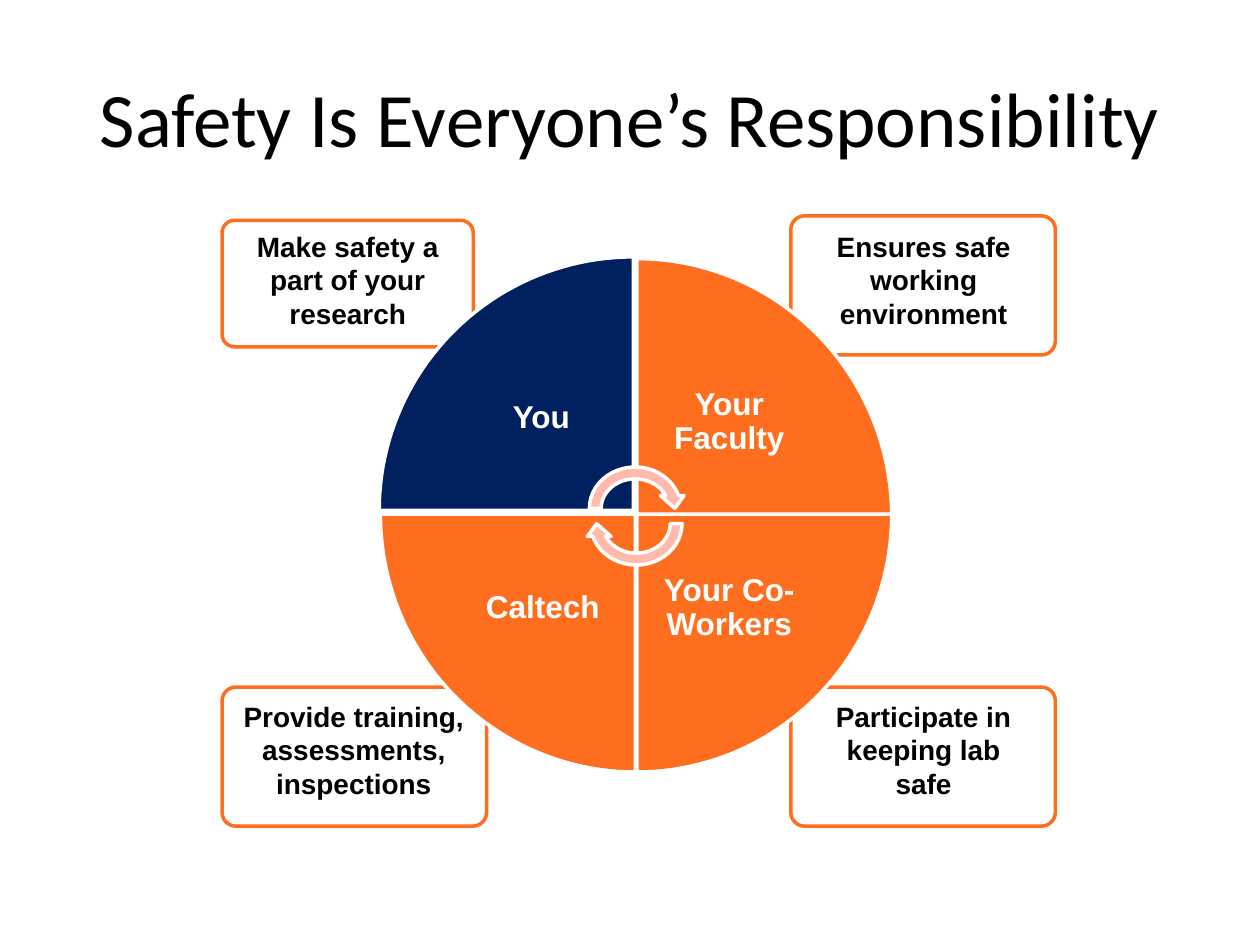
import math
from dataclasses import dataclass

import lxml.etree
import pptx
import pptx.dml.color
import pptx.enum.shapes
import pptx.enum.text
import pptx.oxml.ns
import pptx.util

Pt = pptx.util.Pt
RGB = pptx.dml.color.RGBColor.from_string
SHAPE = pptx.enum.shapes.MSO_SHAPE
ALIGN = pptx.enum.text.PP_ALIGN
ANCHOR = pptx.enum.text.MSO_ANCHOR
qn = pptx.oxml.ns.qn


@dataclass(frozen=True)
class Theme:
    black: str = "000000"
    white: str = "FFFFFF"
    navy: str = "002060"
    orange: str = "FF6E1E"
    pink: str = "FFBAAC"
    title_font: str = "Calibri"
    body_font: str = "Arial"
    title_size: int = 44
    wedge_size: int = 18
    card_size: int = 16
    line: int = 2


theme = Theme()


def paint(sp, fill, line):
    sp.shadow.inherit = False
    sp.fill.solid()
    sp.fill.fore_color.rgb = RGB(fill)
    sp.line.color.rgb = RGB(line)
    sp.line.width = Pt(theme.line)


def write(tf, text, font, size, color, bold=True):
    tf.word_wrap = True
    p = tf.paragraphs[0]
    p.text = text
    p.alignment = ALIGN.CENTER
    p.font.name = font
    p.font.size = Pt(size)
    p.font.bold = bold
    p.font.color.rgb = RGB(color)
    return p


prs = pptx.Presentation()
prs.slide_width, prs.slide_height = Pt(720), Pt(540)
s = prs.slides.add_slide(prs.slide_layouts[5])

# Title
title = s.shapes.title
title.left, title.top, title.width, title.height = Pt(36), Pt(21.6), Pt(648), Pt(90)
title.text_frame.vertical_anchor = ANCHOR.MIDDLE
write(title.text_frame, "Safety Is Everyone’s Responsibility",
      theme.title_font, theme.title_size, theme.black, bold=False)

# Cards behind the wheel: left, top, width, height
cards = [
    (126.9, 125.9, 143.6, 72.3),
    (126.9, 392.6, 151.2, 79.5),
    (451.9, 123.3, 151.2, 79.5),
    (451.9, 392.6, 151.2, 79.5),
]
for box in cards:
    sp = s.shapes.add_shape(SHAPE.ROUNDED_RECTANGLE, *map(Pt, box))
    sp.adjustments[0] = 0.1
    paint(sp, theme.white, theme.orange)
    color = sp.fill._xPr.find(qn("a:solidFill"))[0]
    lxml.etree.SubElement(color, qn("a:alpha")).set("val", "90000")

# Wheel quadrants: text, fill, hub x and y, radii, direction from the hub
wedges = [
    ("You", theme.navy, 362, 291.7, 145.3, 144.9, -1, -1),
    ("Your Faculty", theme.orange, 363.9, 295.2, 145.7, 147.4, 1, -1),
    ("Your Co-Workers", theme.orange, 363.9, 293.8, 145.7, 147.4, 1, 1),
    ("Caltech", theme.orange, 363.1, 293.8, 145.7, 147.4, -1, 1),
]
outer, inner, steps = 50, 10, 45
for text, fill, x, y, rx, ry, dx, dy in wedges:
    angles = [math.pi / 2 * i / steps for i in range(steps + 1)]
    arc = [(Pt(x + dx * rx * math.cos(a)), Pt(y + dy * ry * math.sin(a)))
           for a in angles]
    builder = s.shapes.build_freeform(Pt(x), Pt(y))
    builder.add_line_segments(arc, close=True)
    sp = builder.convert_to_shape()
    paint(sp, fill, theme.white)
    tf = sp.text_frame
    tf.vertical_anchor = ANCHOR.MIDDLE
    tf.margin_left, tf.margin_right = (
        map(Pt, (outer, inner) if dx < 0 else (inner, outer)))
    tf.margin_top, tf.margin_bottom = (
        map(Pt, (outer, inner) if dy < 0 else (inner, outer)))
    p = write(tf, text, theme.body_font, theme.wedge_size, theme.white)
    p.line_spacing = 0.9

# Circling arrows at the hub
for left, top, turn in [(333.4, 263.5, 0), (334.1, 272.2, 180)]:
    sp = s.shapes.add_shape(SHAPE.CIRCULAR_ARROW, Pt(left), Pt(top), Pt(59), Pt(54))
    sp.rotation = turn
    paint(sp, theme.pink, theme.white)

# Card labels: text, left, top, width
labels = [
    ("Make safety a part of your research", 126.9, 127.5, 143.6),
    ("Participate in keeping lab safe", 461.5, 396, 132.5),
    ("Ensures safe working environment", 467.3, 127.5, 121),
    ("Provide training, assessments, inspections", 126.9, 396, 150.5),
]
for text, left, top, width in labels:
    tf = s.shapes.add_textbox(Pt(left), Pt(top), Pt(width), Pt(72)).text_frame
    write(tf, text, theme.body_font, theme.card_size, theme.black)

prs.save("out.pptx")
